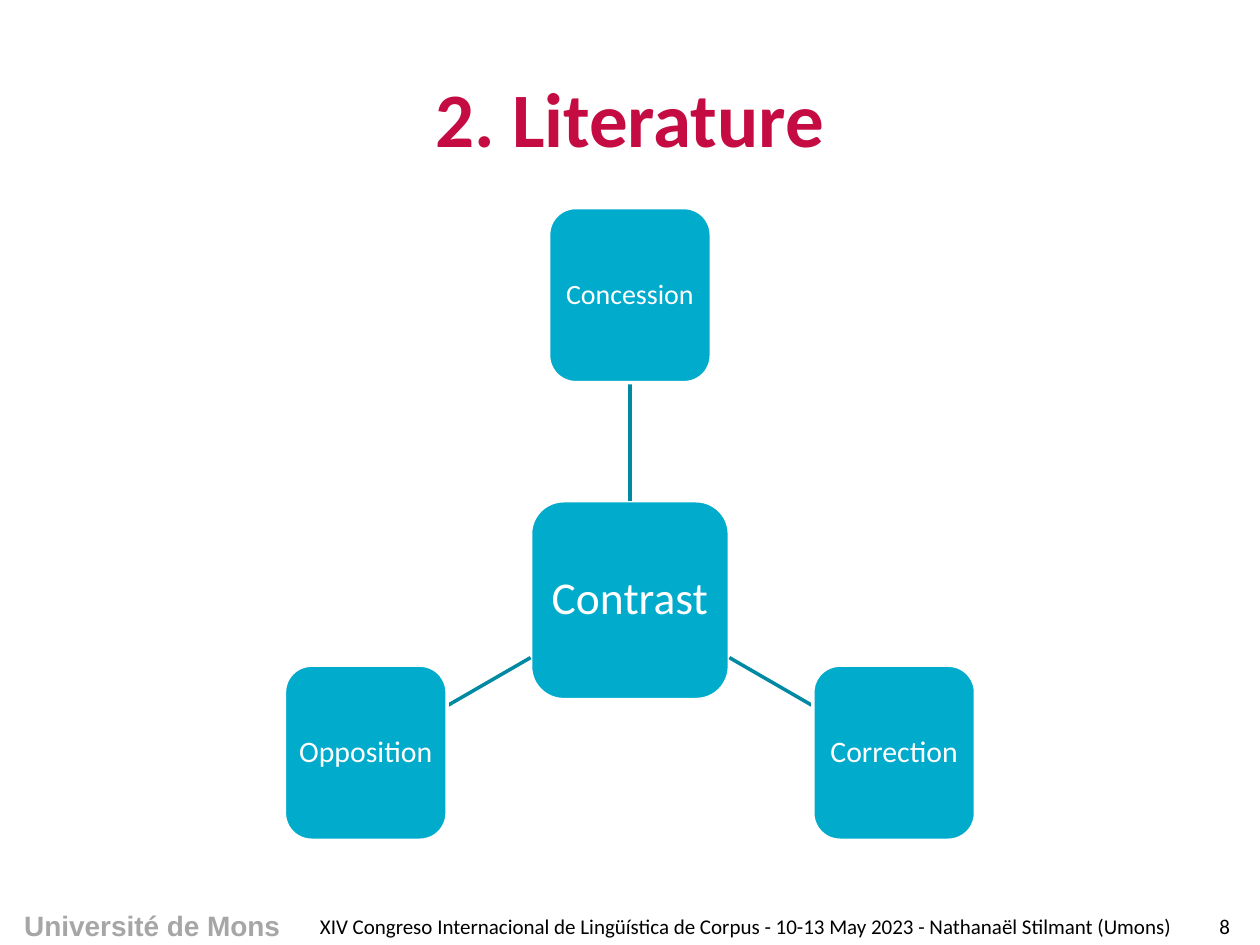
from dataclasses import dataclass
from math import cos, radians, sin

from lxml import etree
from pptx import Presentation
from pptx import util as u
from pptx.dml.color import RGBColor
from pptx.enum import shapes, text
from pptx.oxml.ns import qn


@dataclass(frozen=True)
class Theme:
    font: str = "Calibri"
    brand_font: str = "Arial"
    title: str = "C40C42"
    brand: str = "A6A6A6"
    ink: str = "000000"
    white: str = "FFFFFF"
    fill: str = "00ABCC"
    link: str = "0089A3"
    title_pt: int = 44
    hub_pt: int = 26
    brand_pt: int = 16
    footer_pt: int = 12
    line_pt: int = 2


@dataclass(frozen=True)
class Node:
    """A rounded box, given by its centre and size in cm."""
    label: str
    x: float
    y: float
    w: float
    h: float
    pt: int

    def edge(self, angle: float) -> tuple[float, float]:
        """Point where a ray from the centre leaves the box."""
        dx, dy = cos(radians(angle)), sin(radians(angle))
        reach = 1 / max(2 * abs(dx) / self.w, 2 * abs(dy) / self.h)
        return self.x + reach * dx, self.y + reach * dy


T = Theme()
CENTER, LEFT = text.PP_ALIGN.CENTER, text.PP_ALIGN.LEFT
RADIUS = 6.15
INSET = 0.05


def write(tf, label: str, pt: int, color: str, font: str = T.font,
          bold: bool = False, align=CENTER):
    tf.word_wrap = True
    tf.vertical_anchor = text.MSO_ANCHOR.MIDDLE
    p = tf.paragraphs[0]
    p.alignment = align
    r = p.add_run()
    r.text = label
    r.font.name, r.font.size, r.font.bold = font, u.Pt(pt), bold
    r.font.color.rgb = RGBColor.from_string(color)
    return p


def add_label(s, x: float, y: float, w: float, h: float, label: str, **style) -> None:
    sp = s.shapes.add_textbox(u.Cm(x), u.Cm(y), u.Cm(w), u.Cm(h))
    write(sp.text_frame, label, **style)


def add_node(s, n: Node) -> None:
    sp = s.shapes.add_shape(
        shapes.MSO_SHAPE.ROUNDED_RECTANGLE, u.Cm(n.x - n.w / 2),
        u.Cm(n.y - n.h / 2), u.Cm(n.w), u.Cm(n.h))
    sp.shadow.inherit = False
    sp.fill.solid()
    sp.fill.fore_color.rgb = RGBColor.from_string(T.fill)
    sp.line.color.rgb = RGBColor.from_string(T.white)
    sp.line.width = u.Pt(T.line_pt)
    tf = sp.text_frame
    tf.margin_left = tf.margin_right = u.Cm(INSET)
    tf.margin_top = tf.margin_bottom = u.Cm(INSET)
    write(tf, n.label, n.pt, T.white).line_spacing = 0.9


def add_link(s, start: tuple[float, float], end: tuple[float, float]) -> None:
    ln = s.shapes.add_connector(
        shapes.MSO_CONNECTOR.STRAIGHT, *(u.Cm(v) for v in (*start, *end)))
    ln.line.color.rgb = RGBColor.from_string(T.link)
    ln.line.width = u.Pt(T.line_pt)
    etree.SubElement(ln._element.spPr, qn("a:effectLst"))


def main() -> None:
    prs = Presentation()
    prs.slide_width, prs.slide_height = u.Cm(25.4), u.Cm(19.05)
    s = prs.slides.add_slide(prs.slide_layouts[5])

    # Title
    title = s.shapes.title
    title.left, title.top = u.Cm(1.27), u.Cm(0.76)
    title.width, title.height = u.Cm(22.86), u.Cm(3.18)
    write(title.text_frame, "2. Literature", T.title_pt, T.title, bold=True)

    # Footer
    add_label(s, -0.03, 18.19, 6.2, 0.94, "Université de Mons", pt=T.brand_pt,
              color=T.brand, font=T.brand_font, bold=True)
    add_label(s, 6.2, 18.29, 17.78, 0.76,
              "XIV Congreso Internacional de Lingüística de Corpus - "
              "10-13 May 2023 - Nathanaël Stilmant (Umons)",
              pt=T.footer_pt, color=T.ink, align=LEFT)
    add_label(s, 23.98, 18.29, 1.42, 0.76, "8", pt=T.footer_pt, color=T.ink)

    # Radial diagram: three relations at 120 degree steps around the hub
    hub = Node("Contrast", 12.7, 12.1, 4.01, 4.01, T.hub_pt)
    add_node(s, hub)
    relations = (("Concession", 16), ("Correction", 17), ("Opposition", 17))
    for i, (label, pt) in enumerate(relations):
        angle = -90 + 120 * i
        node = Node(label, hub.x + RADIUS * cos(radians(angle)),
                    hub.y + RADIUS * sin(radians(angle)), 3.28, 3.53, pt)
        add_link(s, hub.edge(angle), node.edge(angle + 180))
        add_node(s, node)

    prs.save("out.pptx")


if __name__ == "__main__":
    main()
